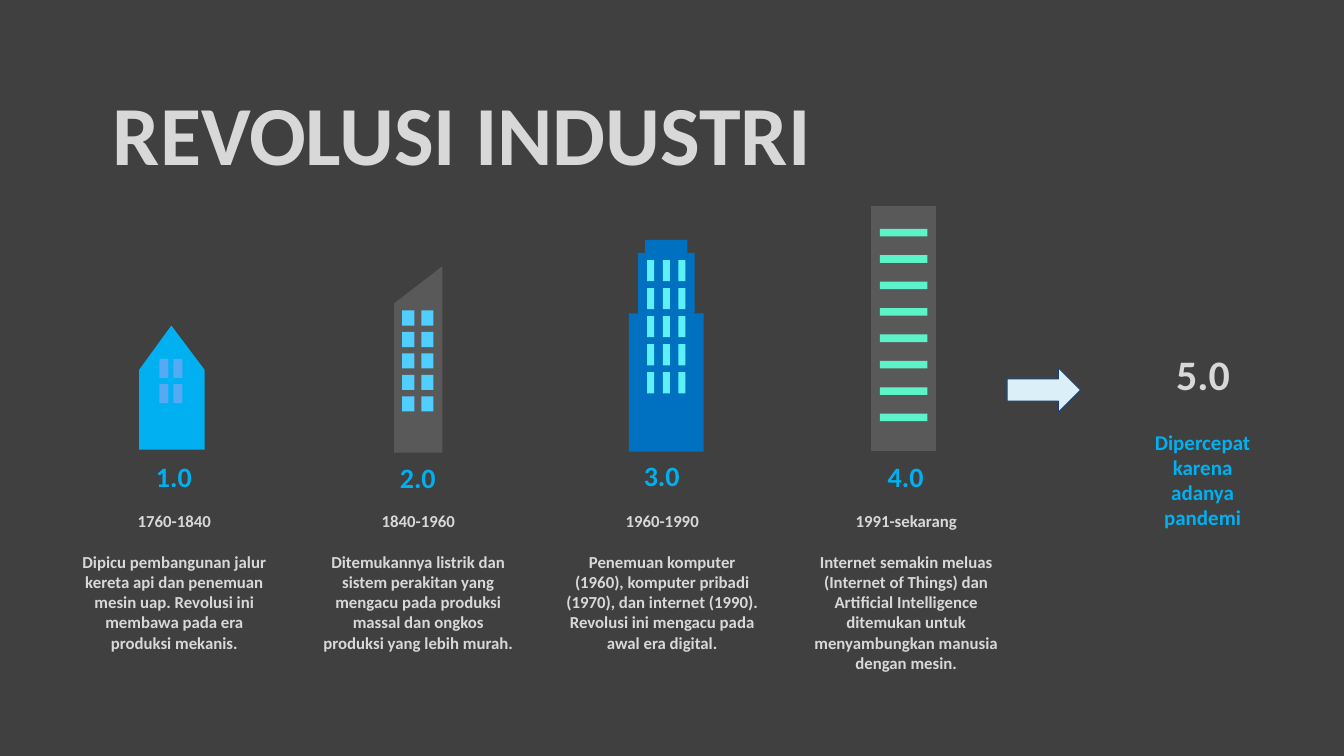
from dataclasses import dataclass
from itertools import product

from pptx import Presentation
from pptx.dml.color import RGBColor
from pptx.enum.shapes import MSO_SHAPE
from pptx.enum.text import MSO_ANCHOR, MSO_AUTO_SIZE, PP_ALIGN
from pptx.util import Emu, Inches, Pt

FONT = "Calibri"
BACKGROUND, PALE, ACCENT = "404040", "D8D8D8", "00B0F0"
PERIOD_PITCH = 24.2
DESCRIPTION_GAP = 14.6


@dataclass(frozen=True)
class Windows:
    left: float
    top: float
    width: float
    height: float
    columns: int
    rows: int
    column_step: float
    row_step: float
    colour: str


@dataclass(frozen=True)
class Building:
    outline: tuple[tuple[float, float], ...]
    colour: str
    windows: Windows


@dataclass(frozen=True)
class Period:
    version: str
    version_top: float
    years: str
    description: str
    building: Building


PERIODS = (
    Period(
        "1.0", 45.1, "1760-1840",
        "Dipicu pembangunan jalur kereta api dan penemuan mesin uap. "
        "Revolusi ini membawa pada era produksi mekanis.",
        Building(
            ((20.3, 44.6), (13.8, 44.6), (13.8, 36.7), (17, 32.3), (20.3, 36.7)),
            ACCENT,
            Windows(15.8, 35.6, 0.9, 1.9, 2, 2, 1.4, 2.5, "56A9F3"),
        ),
    ),
    Period(
        "2.0", 45.2, "1840-1960",
        "Ditemukannya listrik dan sistem perakitan yang mengacu pada "
        "produksi massal dan ongkos produksi yang lebih murah.",
        Building(
            ((43.9, 26.4), (39.1, 30.1), (39.1, 44.9), (43.9, 44.9)),
            "595959",
            Windows(39.9, 30.8, 1.2, 1.5, 2, 5, 1.9, 2.13, "4FCEFF"),
        ),
    ),
    Period(
        "3.0", 45, "1960-1990",
        "Penemuan komputer (1960), komputer pribadi (1970), dan internet "
        "(1990). Revolusi ini mengacu pada awal era digital.",
        Building(
            ((68.9, 31.1), (68.9, 25.1), (68.2, 25.1), (68.2, 23.8),
             (64, 23.8), (64, 25.1), (63.3, 25.1), (63.3, 31.1),
             (62.4, 31.1), (62.4, 44.8), (69.8, 44.8), (69.8, 31.1)),
            "0070C0",
            Windows(64.2, 25.8, 0.7, 2.1, 3, 5, 1.55, 2.78, "5CF0F7"),
        ),
    ),
    Period(
        "4.0", 45.1, "1991-sekarang",
        "Internet semakin meluas (Internet of Things) dan Artificial "
        "Intelligence ditemukan untuk menyambungkan manusia dengan mesin.",
        Building(
            ((86.4, 20.4), (92.9, 20.4), (92.9, 44.7), (86.4, 44.7)),
            "595959",
            Windows(87.3, 22.7, 4.7, 0.75, 1, 8, 0, 2.62, "5DF3C9"),
        ),
    ),
)


def grid(cells: float) -> Emu:
    """Turn columns or rows of the tenth-of-an-inch grid into a length."""
    return Inches(cells / 10)


def rgb(colour: str) -> RGBColor:
    return RGBColor.from_string(colour)


def paint(shape, colour: str, line: str | None = None) -> None:
    shape.shadow.inherit = False
    shape.fill.solid()
    shape.fill.fore_color.rgb = rgb(colour)
    if line:
        shape.line.color.rgb = rgb(line)
        shape.line.width = Pt(0.75)
    else:
        shape.line.fill.background()


def set_text(shape, lines: tuple[str, ...], size: float, colour: str,
             align: PP_ALIGN = PP_ALIGN.CENTER, wide_inset: bool = False) -> None:
    frame = shape.text_frame
    frame.text = "\n".join(lines)
    frame.word_wrap = True
    frame.auto_size = MSO_AUTO_SIZE.NONE
    frame.vertical_anchor = MSO_ANCHOR.TOP
    frame.margin_left = frame.margin_right = grid(1.3 if wide_inset else 1)
    frame.margin_top = frame.margin_bottom = grid(0.6 if wide_inset else 0.5)
    for index, paragraph in enumerate(frame.paragraphs):
        paragraph.alignment = align
        paragraph.space_before = Pt(DESCRIPTION_GAP if index else 0)
        for run in paragraph.runs:
            run.font.name = FONT
            run.font.size = Pt(size)
            run.font.bold = True
            run.font.color.rgb = rgb(colour)


def add_label(slide, left: float, top: float, width: float, height: float,
              lines: tuple[str, ...], size: float, colour: str,
              wide_inset: bool = False) -> None:
    label = slide.shapes.add_textbox(grid(left), grid(top), grid(width), grid(height))
    set_text(label, lines, size, colour, wide_inset=wide_inset)


def add_building(slide, building: Building) -> None:
    start, *corners = [(grid(x), grid(y)) for x, y in building.outline]
    builder = slide.shapes.build_freeform(*start)
    builder.add_line_segments(corners, close=True)
    paint(builder.convert_to_shape(), building.colour)

    windows = building.windows
    for row, column in product(range(windows.rows), range(windows.columns)):
        window = slide.shapes.add_shape(
            MSO_SHAPE.RECTANGLE,
            grid(windows.left + column * windows.column_step),
            grid(windows.top + row * windows.row_step),
            grid(windows.width), grid(windows.height))
        paint(window, windows.colour)


def add_period(slide, index: int, period: Period) -> None:
    offset = index * PERIOD_PITCH
    add_building(slide, period.building)
    add_label(slide, 4.4 + offset, period.version_top, 25.7, 4.4,
              (period.version,), 20, ACCENT)
    add_label(slide, 6.8 + offset, 50.2, 21, 17.2,
              (period.years, period.description), 12, PALE)


def add_title(slide) -> None:
    title = slide.shapes.title
    title.left, title.top = grid(9.9), grid(7.5)
    title.width, title.height = grid(106.1), grid(10.6)
    set_text(title, ("REVOLUSI INDUSTRI",), 60, PALE, PP_ALIGN.JUSTIFY, True)


def add_next_revolution(slide) -> None:
    arrow = slide.shapes.add_shape(
        MSO_SHAPE.RIGHT_ARROW, grid(99.9), grid(36.5), grid(7.3), grid(4.4))
    paint(arrow, "DBEFF9", "17406D")
    add_label(slide, 109.6, 34, 19.5, 6.2, ("5.0",), 30, PALE, True)
    add_label(slide, 113.4, 42.1, 11.8, 11.1,
              ("Dipercepat karena adanya pandemi",), 15, ACCENT)


def main() -> None:
    deck = Presentation()
    deck.slide_width, deck.slide_height = grid(133.33), grid(75)
    slide = deck.slides.add_slide(deck.slide_layouts.get_by_name("Title Only"))
    slide.background.fill.solid()
    slide.background.fill.fore_color.rgb = rgb(BACKGROUND)
    add_title(slide)
    for index, period in enumerate(PERIODS):
        add_period(slide, index, period)
    add_next_revolution(slide)
    deck.save("out.pptx")


if __name__ == "__main__":
    main()
